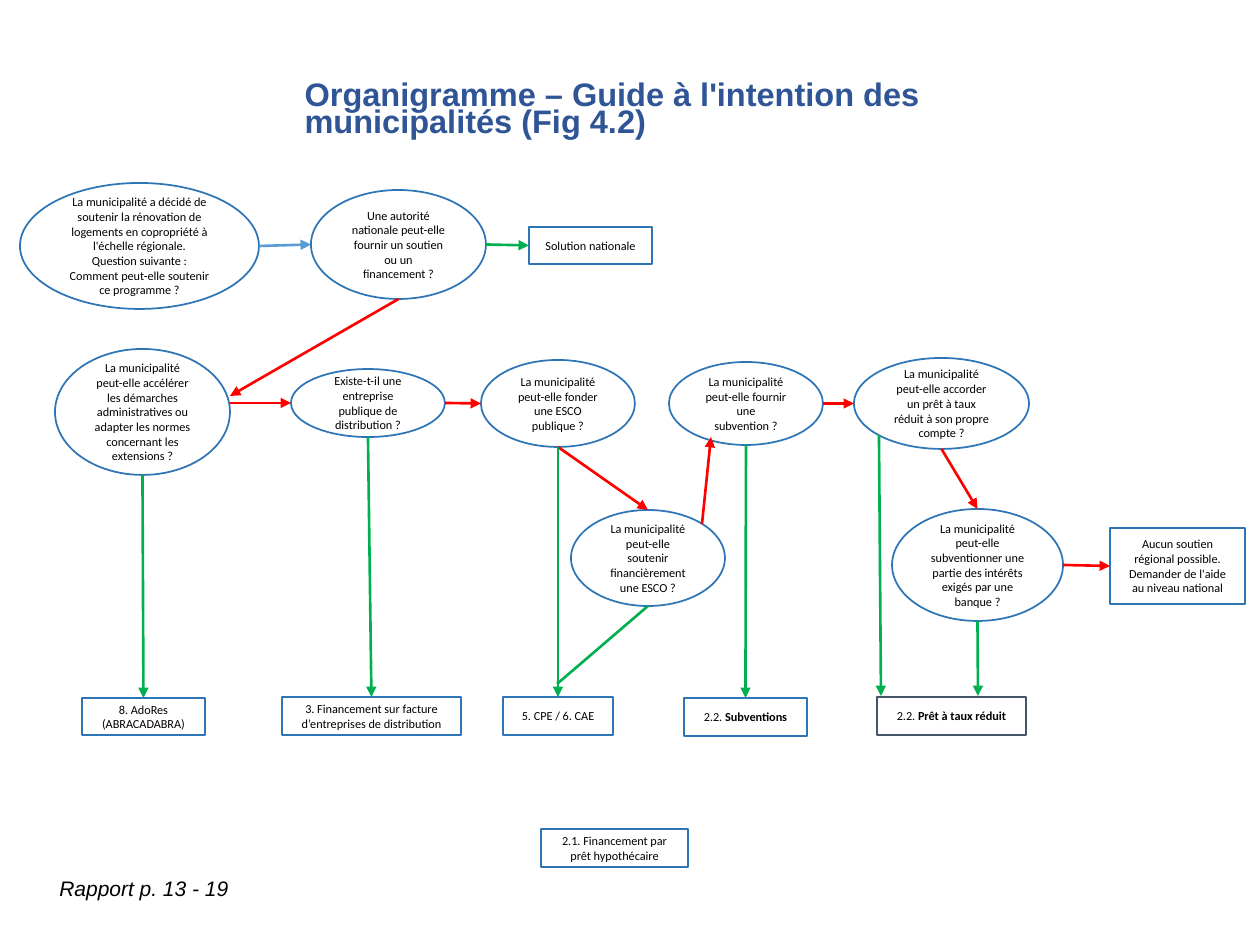
from lxml import etree
from pptx import Presentation
from pptx import util as u
from pptx.dml.color import RGBColor
from pptx.enum import shapes, text
from pptx.oxml import ns

PX = 914400 / 126  # EMU in one px
WHITE = RGBColor(0xFF, 0xFF, 0xFF)
BLACK = RGBColor(0x00, 0x00, 0x00)
NAVY = RGBColor(0x2F, 0x55, 0x97)
BLUE = RGBColor(0x2E, 0x75, 0xB6)
SKY = RGBColor(0x5B, 0x9B, 0xD5)
SLATE = RGBColor(0x44, 0x54, 0x6A)
RED = RGBColor(0xFF, 0x00, 0x00)
GREEN = RGBColor(0x00, 0xB0, 0x50)

OVAL = shapes.MSO_SHAPE.OVAL
RECT = shapes.MSO_SHAPE.RECTANGLE
TOP, LEFT, BOTTOM, RIGHT = range(4)

# Questions: name, box, paragraphs
QUESTIONS = [
    ("start", (20, 183, 239, 126), [
        "La municipalité a décidé de soutenir la rénovation de logements en "
        "copropriété à l'échelle régionale.",
        "Question suivante :",
        "Comment peut-elle soutenir ce programme ?"]),
    ("national", (311, 190, 175, 109), [
        "Une autorité nationale peut-elle fournir un soutien ou un financement ?"]),
    ("speed_up", (55, 349, 175, 126), [
        "La municipalité peut-elle accélérer les démarches administratives ou "
        "adapter les normes concernant les extensions ?"]),
    ("utility", (291, 369, 154, 68), [
        "Existe-t-il une entreprise publique de distribution ?"]),
    ("found_esco", (481, 360, 154, 87), [
        "La municipalité peut-elle fonder une ESCO publique ?"]),
    ("fund_esco", (571, 510, 154, 96), [
        "La municipalité peut-elle soutenir financièrement une ESCO ?"]),
    ("grant", (669, 362, 154, 83), [
        "La municipalité peut-elle fournir une subvention ?"]),
    ("loan", (854, 358, 175, 91), [
        "La municipalité peut-elle accorder un prêt à taux réduit à son propre compte ?"]),
    ("interest", (892, 509, 171, 112), [
        "La municipalité peut-elle subventionner une partie des intérêts exigés "
        "par une banque ?"]),
]

# Outcomes: name, box, plain text, bold text, border
OUTCOMES = [
    ("solution", (529, 227, 123, 37), "Solution nationale", "", BLUE),
    ("no_support", (1110, 528, 135, 76),
     "Aucun soutien régional possible. Demander de l'aide au niveau national", "", BLUE),
    ("adores", (82, 698, 123, 37), "8. AdoRes (ABRACADABRA)", "", BLUE),
    ("on_bill", (282, 697, 179, 38),
     "3. Financement sur facture d’entreprises de distribution", "", BLUE),
    ("cpe", (503, 697, 110, 38), "5. CPE / 6. CAE", "", BLUE),
    ("grants", (684, 698, 123, 38), "2.2. ", "Subventions", BLUE),
    ("low_rate", (877, 697, 149, 38), "2.2. ", "Prêt à taux réduit", SLATE),
    ("mortgage", (541, 829, 147, 38), "2.1. Financement par prêt hypothécaire", "", BLUE),
]

# Arrows: each end is a (name, side) pair or a free point in px
ARROWS = [
    (("start", RIGHT), ("national", LEFT), SKY),
    (("national", RIGHT), ("solution", LEFT), GREEN),
    (("national", BOTTOM), (230, 396), RED),
    ((230, 403), ("utility", LEFT), RED),
    (("utility", RIGHT), ("found_esco", LEFT), RED),
    (("found_esco", BOTTOM), ("fund_esco", TOP), RED),
    ((702, 524), (711, 437), RED),
    (("grant", RIGHT), ("loan", LEFT), RED),
    (("loan", BOTTOM), ("interest", TOP), RED),
    (("interest", RIGHT), ("no_support", LEFT), RED),
    (("speed_up", BOTTOM), ("adores", TOP), GREEN),
    (("utility", BOTTOM), ("on_bill", TOP), GREEN),
    (("found_esco", BOTTOM), ("cpe", TOP), GREEN),
    (("grant", BOTTOM), ("grants", TOP), GREEN),
    ((879, 435), (881, 696), GREEN),
    (("interest", BOTTOM), (978, 696), GREEN),
]


def px(*values):
    return [u.Emu(round(v * PX)) for v in values]


def add_run(p, words, size, font, color, bold=False, italic=False):
    r = p.add_run()
    r.text = words
    r.font.size, r.font.name = u.Pt(size), font
    r.font.bold, r.font.italic = bold, italic
    r.font.color.rgb = color


def add_node(s, kind, box, paragraphs, border=BLUE):
    """Outlined shape; each paragraph is a list of (text, bold) runs."""
    sp = s.shapes.add_shape(kind, *px(*box))
    sp.shadow.inherit = False
    sp.fill.solid()
    sp.fill.fore_color.rgb = WHITE
    sp.line.color.rgb = border
    sp.line.width = u.Pt(1)
    tf = sp.text_frame
    tf.word_wrap = True
    tf.vertical_anchor = text.MSO_ANCHOR.MIDDLE
    for i, runs in enumerate(paragraphs):
        p = tf.paragraphs[0] if i == 0 else tf.add_paragraph()
        p.alignment = text.PP_ALIGN.CENTER
        for words, bold in runs:
            add_run(p, words, 7, "Calibri", BLACK, bold)
    return sp


def end_point(nodes, end):
    if not isinstance(end[0], str):
        return px(*end)
    sp, side = nodes[end[0]], end[1]
    fx, fy = {TOP: (0.5, 0), LEFT: (0, 0.5), BOTTOM: (0.5, 1), RIGHT: (1, 0.5)}[side]
    return u.Emu(round(sp.left + fx * sp.width)), u.Emu(round(sp.top + fy * sp.height))


def add_link(s, nodes, start, end, color, arrow=True):
    c = s.shapes.add_connector(shapes.MSO_CONNECTOR.STRAIGHT,
                               *end_point(nodes, start), *end_point(nodes, end))
    c.line.color.rgb = color
    c.line.width = u.Pt(1.5)
    if arrow:
        etree.SubElement(c.line._get_or_add_ln(), ns.qn("a:tailEnd"), type="triangle")
    etree.SubElement(c._element.spPr, ns.qn("a:effectLst"))
    # Ovals number their sides differently, except for the top
    if isinstance(end[0], str):
        sp = nodes[end[0]]
        if end[1] == TOP or sp.auto_shape_type == RECT:
            c.end_connect(sp, end[1])


def set_title(s, words):
    sp = s.shapes.title
    sp.left, sp.top, sp.width, sp.height = px(292, 76, 833, 71)
    tf = sp.text_frame
    tf.word_wrap = True
    tf.auto_size = text.MSO_AUTO_SIZE.NONE
    tf.vertical_anchor = text.MSO_ANCHOR.MIDDLE
    p = tf.paragraphs[0]
    p.alignment = text.PP_ALIGN.LEFT
    p.line_spacing = 0.7
    add_run(p, words, 18.6, "Arial", NAVY, bold=True)


def add_page_note(s, words):
    tf = s.shapes.add_textbox(*px(47, 869, 292, 38)).text_frame
    tf.word_wrap = True
    add_run(tf.paragraphs[0], words, 12, "Arial", BLACK, italic=True)


def main():
    prs = Presentation()
    prs.slide_width, prs.slide_height = u.Inches(10), u.Inches(7.5)
    s = prs.slides.add_slide(prs.slide_layouts[5])
    set_title(s, "Organigramme – Guide à l'intention des municipalités (Fig 4.2)")
    add_page_note(s, "Rapport p. 13 - 19")

    # Flowchart nodes
    nodes = {}
    for name, box, lines in QUESTIONS:
        nodes[name] = add_node(s, OVAL, box, [[(line, False)] for line in lines])
    for name, box, plain, strong, border in OUTCOMES:
        runs = [(plain, False)] + ([(strong, True)] if strong else [])
        nodes[name] = add_node(s, RECT, box, [runs], border)

    # Links: green for yes, red for no
    for start, end, color in ARROWS:
        add_link(s, nodes, start, end, color)
    add_link(s, nodes, ("fund_esco", BOTTOM), (557, 684), GREEN, arrow=False)

    prs.save("out.pptx")


if __name__ == "__main__":
    main()
